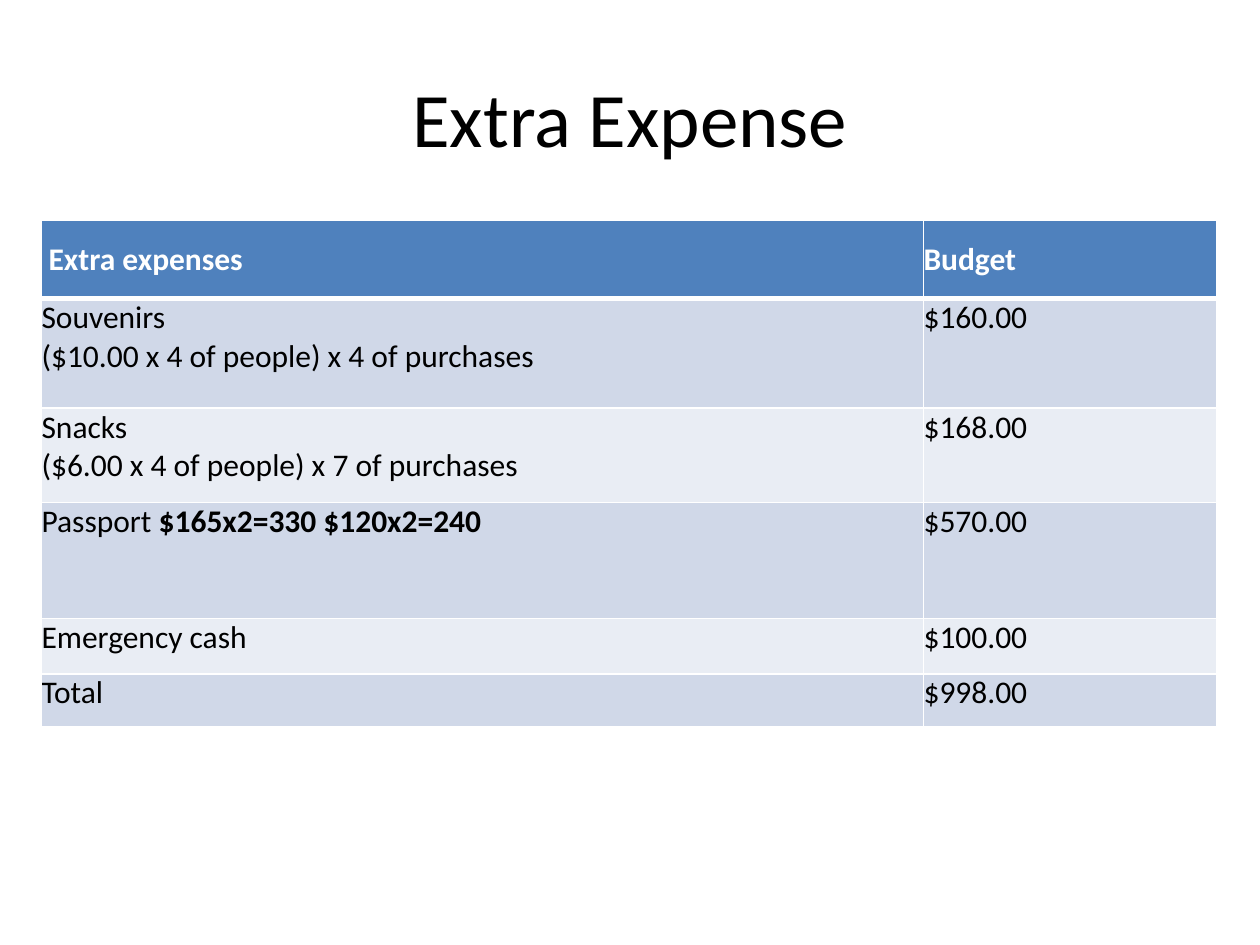
from lxml import etree
from pptx import Presentation
from pptx import util as u
from pptx.dml.color import RGBColor
from pptx.enum import text
from pptx.oxml.ns import qn

COLORS = {
    "ink": "000000",
    "white": "FFFFFF",
    "header": "4F81BD",
    "odd": "D0D8E8",
    "even": "E9EDF4",
}
TITLE_ONLY = 5

# Each cell is a list of paragraphs, each paragraph a list of (text, bold) runs.
HEADER = [[[(" Extra expenses", True)]], [[("Budget", True)]]]
EXPENSES = [
    [[[("Souvenirs", False)],
      [("($10.00 x 4 of people) x 4 of purchases", False)]],
     [[("$160.00", False)]]],
    [[[("Snacks", False)],
      [("($6.00 x 4 of people) x 7 of purchases", False)]],
     [[("$168.00", False)]]],
    [[[("Passport ", False), ("$165x2=330 $120x2=240", True)]],
     [[("$570.00", False)]]],
    [[[("Emergency cash", False)]], [[("$100.00", False)]]],
    [[[("Total", False)]], [[("$998.00", False)]]],
]
COLUMN_WIDTHS = [7, 2.33]
ROW_HEIGHTS = [0.62, 0.87, 0.75, 0.92, 0.44, 0.42]


def rgb(name):
    return RGBColor.from_string(COLORS[name])


class SlideBuilder:
    """Holds the style and the current slide."""

    font = "Calibri"
    title_size = 44
    table_size = 18

    def __init__(self, presentation):
        layout = presentation.slide_layouts[TITLE_ONLY]
        self.slide = presentation.slides.add_slide(layout)

    def add_run(self, paragraph, words, size, color, bold=False):
        run = paragraph.add_run()
        run.text = words
        run.font.name = self.font
        run.font.size = u.Pt(size)
        run.font.bold = bold
        run.font.color.rgb = rgb(color)

    def title(self, words, left, top, width, height):
        heading = self.slide.shapes.title
        heading.left, heading.top = u.Inches(left), u.Inches(top)
        heading.width, heading.height = u.Inches(width), u.Inches(height)
        heading.text_frame.vertical_anchor = text.MSO_ANCHOR.MIDDLE
        paragraph = heading.text_frame.paragraphs[0]
        paragraph.alignment = text.PP_ALIGN.CENTER
        self.add_run(paragraph, words, self.title_size, "ink")

    def table(self, rows, left, top, widths, heights):
        grid = self.slide.shapes.add_table(
            len(rows), len(widths), u.Inches(left), u.Inches(top),
            u.Inches(sum(widths)), u.Inches(sum(heights))).table
        for column, width in zip(grid.columns, widths):
            column.width = u.Inches(width)
        for row, height in zip(grid.rows, heights):
            row.height = u.Inches(height)
        for r, row in enumerate(rows):
            for c, paragraphs in enumerate(row):
                self.cell(grid.cell(r, c), paragraphs, r)

    def cell(self, cell, paragraphs, row):
        is_header = row == 0
        cell.margin_left = cell.margin_right = 0
        cell.margin_top = cell.margin_bottom = 0
        cell.vertical_anchor = (text.MSO_ANCHOR.MIDDLE if is_header
                                else text.MSO_ANCHOR.TOP)
        self.borders(cell, top=3 if row == 1 else 1,
                     bottom=3 if is_header else 1)
        cell.fill.solid()
        cell.fill.fore_color.rgb = rgb(
            "header" if is_header else "odd" if row % 2 else "even")
        frame = cell.text_frame
        for index, runs in enumerate(paragraphs):
            paragraph = frame.add_paragraph() if index else frame.paragraphs[0]
            for words, bold in runs:
                self.add_run(paragraph, words, self.table_size,
                             "white" if is_header else "ink", bold)

    def borders(self, cell, top, bottom):
        """Draw white edges; top and bottom widths are in points."""
        properties = cell._tc.get_or_add_tcPr()
        for side, width in (("L", 1), ("R", 1), ("T", top), ("B", bottom)):
            line = etree.SubElement(properties, qn(f"a:ln{side}"),
                                    w=str(u.Pt(width)))
            fill = etree.SubElement(line, qn("a:solidFill"))
            etree.SubElement(fill, qn("a:srgbClr"), val=COLORS["white"])


def main():
    presentation = Presentation()
    presentation.slide_width = u.Inches(10)
    presentation.slide_height = u.Inches(7.5)
    builder = SlideBuilder(presentation)
    builder.title("Extra Expense", 0.5, 0.3, 9, 1.25)
    builder.table([HEADER] + EXPENSES, 0.33, 1.75,
                  COLUMN_WIDTHS, ROW_HEIGHTS)
    presentation.save("out.pptx")


if __name__ == "__main__":
    main()
